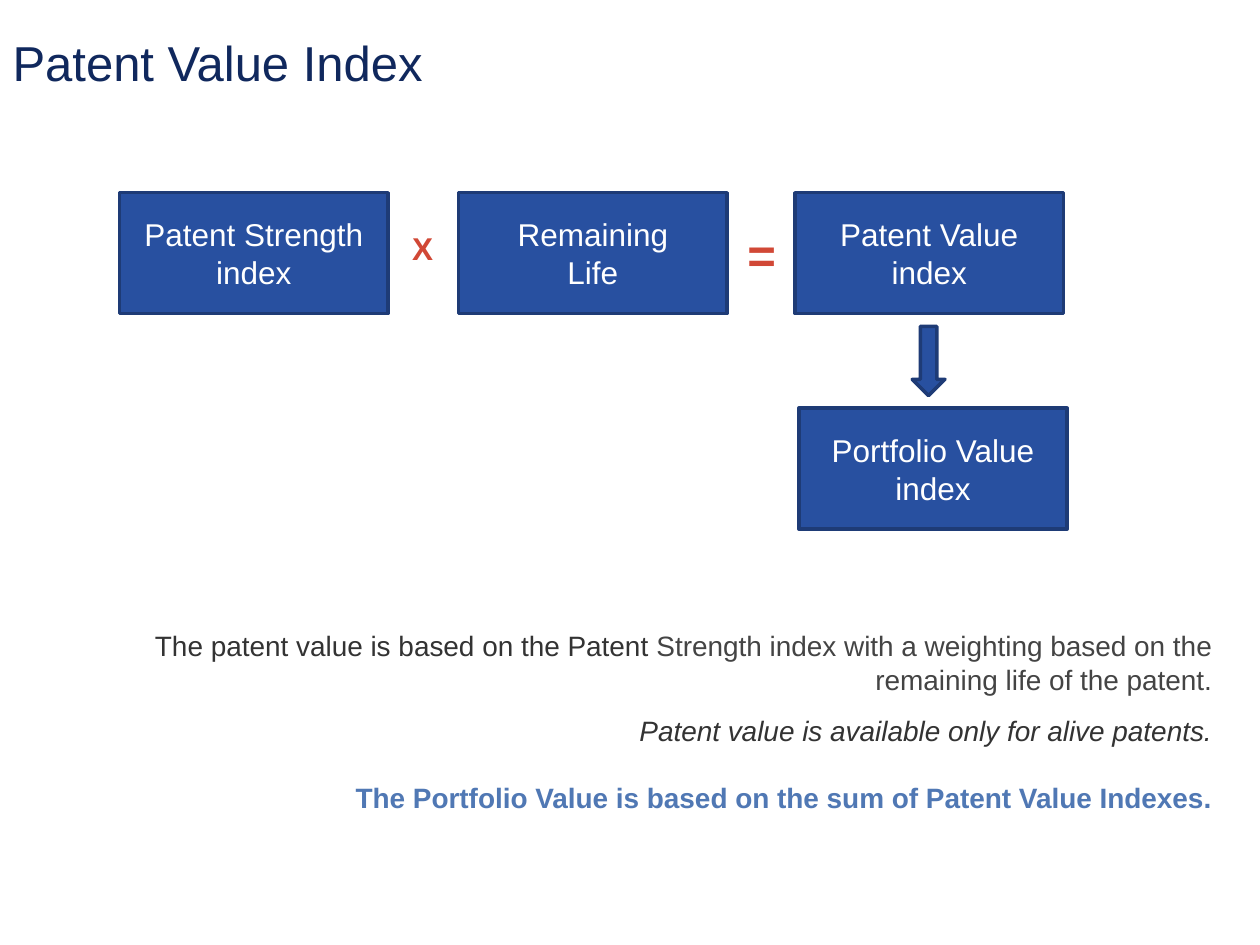
from pptx import Presentation
from pptx.dml.color import RGBColor
from pptx.enum.shapes import MSO_SHAPE
from pptx.enum.text import MSO_ANCHOR, PP_ALIGN
from pptx.util import Inches, Pt

COLORS = {
    "title": "10285D",
    "box": "2850A0",
    "border": "1E3B76",
    "white": "FFFFFF",
    "operator": "D14836",
    "dark": "333333",
    "gray": "444444",
    "accent": "5078B4",
}


def set_font(font, size, color, bold=False, italic=False):
    font.name = "Arial"
    font.size = Pt(size)
    font.bold = bold
    font.italic = italic
    font.color.rgb = RGBColor.from_string(COLORS[color])


def add_block(preset, left, top, width, height):
    """Add a blue shape with a dark blue border."""
    shape = slide.shapes.add_shape(
        preset, Inches(left), Inches(top), Inches(width), Inches(height))
    shape.shadow.inherit = False
    shape.fill.solid()
    shape.fill.fore_color.rgb = RGBColor.from_string(COLORS["box"])
    shape.line.color.rgb = RGBColor.from_string(COLORS["border"])
    shape.line.width = Pt(2)
    return shape


presentation = Presentation()
presentation.slide_width = Inches(10)
presentation.slide_height = Inches(7.5)
slide = presentation.slides.add_slide(presentation.slide_layouts[5])

# Title
title = slide.shapes.title
title.left, title.top = Inches(0), Inches(0.21)
title.width, title.height = Inches(9.45), Inches(1.33)
title.text_frame.text = "Patent Value Index"
title.text_frame.vertical_anchor = MSO_ANCHOR.TOP
title_paragraph = title.text_frame.paragraphs[0]
title_paragraph.alignment = PP_ALIGN.LEFT
set_font(title_paragraph.font, 28, "title")

# Formula boxes and the portfolio result
for left, top, label in [
    (0.95, 1.53, "Patent Strength index"),
    (3.64, 1.53, "Remaining\nLife"),
    (6.31, 1.53, "Patent Value index"),
    (6.34, 3.24, "Portfolio Value index"),
]:
    box = add_block(MSO_SHAPE.RECTANGLE, left, top, 2.13, 0.96)
    box.text_frame.text = label
    box.text_frame.vertical_anchor = MSO_ANCHOR.MIDDLE
    for paragraph in box.text_frame.paragraphs:
        paragraph.alignment = PP_ALIGN.CENTER
        set_font(paragraph.font, 18, "white")

add_block(MSO_SHAPE.DOWN_ARROW, 7.24, 2.59, 0.26, 0.55)

# Operators between the boxes
for left, top, height, symbol, size in [
    (3.12, 1.77, 0.4, "X", 18),
    (5.81, 1.73, 0.57, "=", 28),
]:
    operator = slide.shapes.add_textbox(
        Inches(left), Inches(top), Inches(0.47), Inches(height))
    operator.text_frame.word_wrap = True
    operator.text_frame.text = symbol
    paragraph = operator.text_frame.paragraphs[0]
    paragraph.alignment = PP_ALIGN.CENTER
    set_font(paragraph.font, size, "operator", bold=True)

# Explanation
explanation = slide.shapes.add_textbox(
    Inches(0.81), Inches(4.94), Inches(8.91), Inches(1.85))
frame = explanation.text_frame
frame.word_wrap = True

basis = frame.paragraphs[0]
basis.alignment = PP_ALIGN.RIGHT
for text, color in [
    ("The patent value is based on the Patent ", "dark"),
    ("Strength index with a weighting based on the remaining life of the patent.",
     "gray"),
]:
    run = basis.add_run()
    run.text = text
    set_font(run.font, 16, color)

for text, space, color, bold in [
    ("Patent value is available only for alive patents.", 10, "dark", False),
    ("The Portfolio Value is based on the sum of Patent Value Indexes.",
     19, "accent", True),
]:
    paragraph = frame.add_paragraph()
    paragraph.text = text
    paragraph.alignment = PP_ALIGN.RIGHT
    paragraph.space_before = Pt(space)
    set_font(paragraph.font, 16, color, bold=bold, italic=not bold)

presentation.save("out.pptx")
